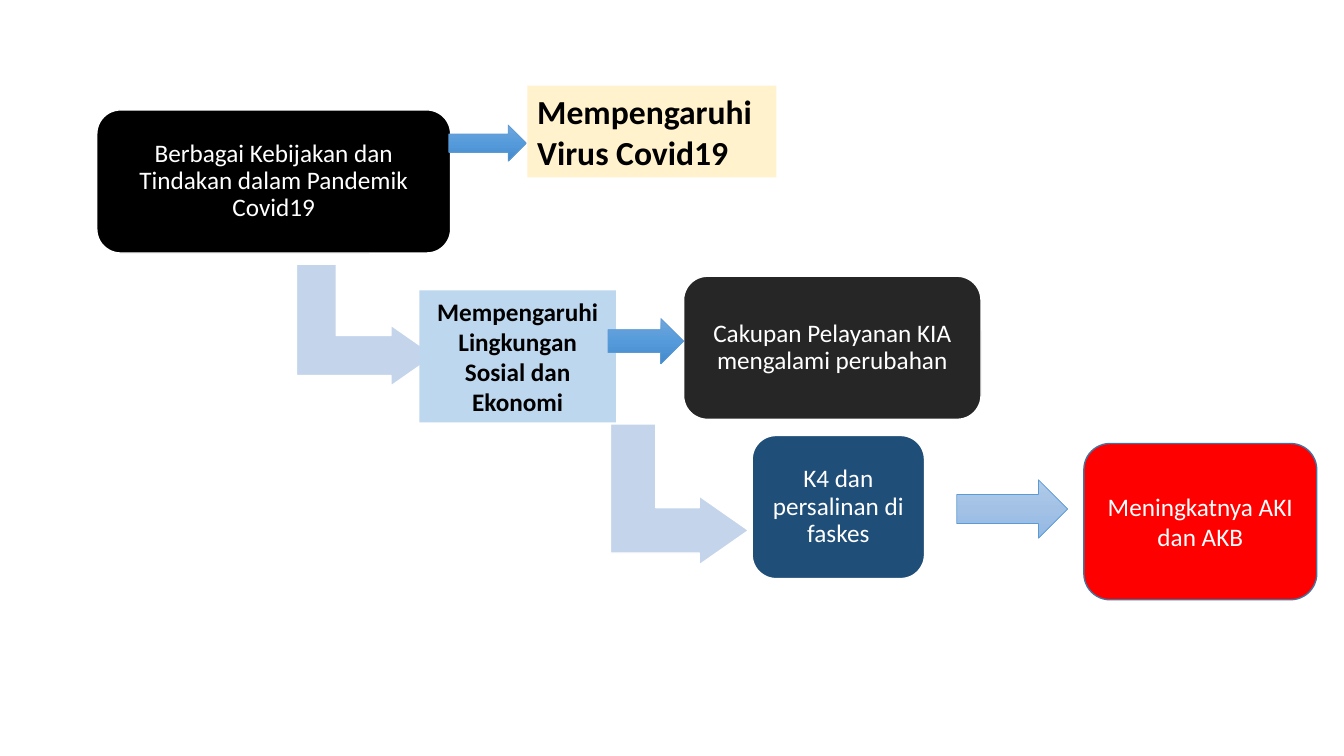
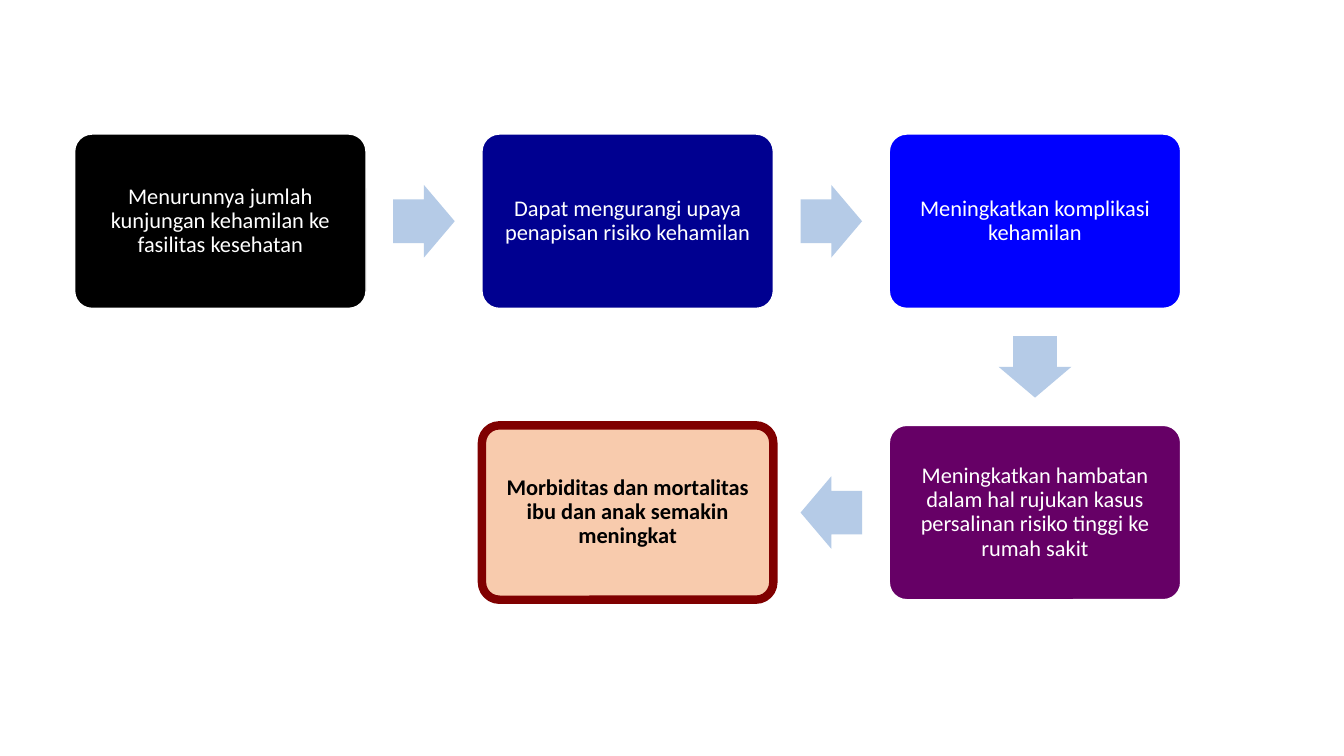
"""Build two flow slides on how the pandemic affects maternal and child health."""
from copy import deepcopy
from itertools import pairwise

from pptx import Presentation
from pptx.dml.color import RGBColor
from pptx.enum.shapes import MSO_SHAPE
from pptx.enum.text import MSO_ANCHOR, PP_ALIGN
from pptx.util import Inches, Pt

HUES = {
    "white": "FFFFFF", "black": "000000", "coal": "262626", "steel": "1F4E79",
    "red": "FF0000", "rim": "43739E", "cream": "FFF2CC", "sky": "BDD7EE",
    "bend": "C4D5EB", "edge": "5B9BD5", "step": "B5CBE7", "navy": "000090",
    "blue": "0000FF", "plum": "660066", "peach": "F8CBAD", "wine": "800000",
}
FADES = {
    "pale": ("B1CBE9", "A3C1E5", "93B9E4"),
    "deep": ("71A6DB", "559BDB", "448ACA"),
}


class Deck:
    """Hold the shared style and the current slide."""

    def __init__(self):
        self.show = Presentation()
        self.show.slide_width = Inches(13.33)
        self.show.slide_height = Inches(7.5)
        self.slide = None

    def page(self):
        self.slide = self.show.slides.add_slide(self.show.slide_layouts[6])

    def shape(self, kind, area, fill=None, line=None, width=1, bends=(), turn=0):
        item = self.slide.shapes.add_shape(kind, *map(Inches, area))
        item.shadow.inherit = False
        item.rotation = turn
        for spot, bend in enumerate(bends):
            item.adjustments[spot] = bend
        if fill:
            item.fill.solid()
            item.fill.fore_color.rgb = RGBColor.from_string(HUES[fill])
        if line:
            item.line.color.rgb = RGBColor.from_string(HUES[line])
            item.line.width = Pt(width)
        else:
            item.line.fill.background()
        return item

    def words(self, item, text, size, hue="white", bold=False,
              align=PP_ALIGN.CENTER, tight=False):
        frame = item.text_frame
        frame.text = text
        frame.word_wrap = True
        frame.vertical_anchor = MSO_ANCHOR.MIDDLE
        para = frame.paragraphs[0]
        para.alignment = align
        if tight:
            para.line_spacing = 0.9
            frame.margin_left = frame.margin_right = Inches(0.07)
            frame.margin_top = frame.margin_bottom = Inches(0.07)
        for run in para.runs:
            run.font.name = "Calibri"
            run.font.size = Pt(size)
            run.font.bold = bold
            run.font.color.rgb = RGBColor.from_string(HUES[hue])

    def card(self, area, text, fill, size=18, line="white", width=1,
             curve=0.167, hue="white", bold=False, tight=True):
        item = self.shape(MSO_SHAPE.ROUNDED_RECTANGLE, area, fill, line, width, (curve,))
        self.words(item, text, size, hue, bold, tight=tight)

    def label(self, area, text, fill, size, align):
        item = self.shape(MSO_SHAPE.RECTANGLE, area, fill)
        self.words(item, text, size, "black", True, align)

    def elbow(self, area):
        self.shape(MSO_SHAPE.BENT_UP_ARROW, area, "bend", "white",
                   bends=(0.328, 0.25, 0.358), turn=90)

    def arrow(self, area, fade):
        item = self.shape(MSO_SHAPE.RIGHT_ARROW, area, line="edge", width=0.5)
        item.fill.gradient()
        item.fill.gradient_angle = 270
        first = item.element.spPr.xpath("./a:gradFill/a:gsLst/a:gs")[0]
        first.addnext(deepcopy(first))
        for stop, hue, place in zip(item.fill.gradient_stops, FADES[fade], (0, 0.5, 1)):
            stop.color.rgb = RGBColor.from_string(hue)
            stop.position = place

    def step(self, mid, turn):
        wide, high = 0.61, 0.72
        area = (mid[0] - wide / 2, mid[1] - high / 2, wide, high)
        self.shape(MSO_SHAPE.RIGHT_ARROW, area, "step", bends=(0.6, 0.5), turn=turn)


def causes(deck):
    """Draw the chain from policies to mortality."""
    deck.page()
    deck.elbow((3.02, 2.54, 1.21, 1.37))
    deck.card((0.96, 1.09, 3.51, 1.42),
              "Berbagai Kebijakan dan Tindakan dalam Pandemik Covid19", "black")
    deck.elbow((6.04, 4.22, 1.4, 1.37))
    deck.card((6.78, 2.74, 2.95, 1.42),
              "Cakupan Pelayanan KIA mengalami perubahan", "coal")
    deck.card((7.46, 4.32, 1.71, 1.42), "K4 dan persalinan di faskes", "steel")
    deck.arrow((9.49, 4.76, 1.1, 0.58), "pale")
    deck.card((10.75, 4.4, 2.31, 1.55), "Meningkatnya AKI dan AKB", "red",
              line="rim", tight=False)
    deck.label((5.23, 0.85, 2.47, 0.91), "Mempengaruhi Virus Covid19",
               "cream", 24, PP_ALIGN.LEFT)
    deck.arrow((4.45, 1.24, 0.77, 0.36), "deep")
    deck.label((4.16, 2.88, 1.95, 1.31), "Mempengaruhi Lingkungan Sosial dan Ekonomi",
               "sky", 18, PP_ALIGN.CENTER)
    deck.arrow((6.03, 3.16, 0.75, 0.45), "deep")


def effects(deck):
    """Draw the winding row of effects on a grid."""
    deck.page()
    wide, high = 2.89, 1.73
    plain = {}
    alarm = {"line": "wine", "width": 6, "hue": "black", "bold": True}
    cards = [
        (0, 0, "Menurunnya jumlah kunjungan kehamilan ke fasilitas kesehatan",
         "black", plain),
        (1, 0, "Dapat mengurangi upaya penapisan risiko kehamilan", "navy", plain),
        (2, 0, "Meningkatkan komplikasi kehamilan", "blue", plain),
        (2, 1, "Meningkatkan hambatan dalam hal rujukan kasus persalinan "
               "risiko tinggi ke rumah sakit", "plum", plain),
        (1, 1, "Morbiditas dan mortalitas ibu dan anak semakin meningkat",
         "peach", alarm),
    ]
    mids = []
    for col, row, text, fill, style in cards:
        left, top = 0.74 + 4.04 * col, 1.33 + 2.89 * row
        deck.card((left, top, wide, high), text, fill, 16, curve=0.1, **style)
        mids.append((left + wide / 2, top + high / 2))
    for (start, end), turn in zip(pairwise(mids), (0, 0, 90, 180)):
        deck.step([a + (b - a) / 2 for a, b in zip(start, end)], turn)


def main():
    """Build and save the slides."""
    deck = Deck()
    causes(deck)
    effects(deck)
    deck.show.save("out.pptx")


if __name__ == "__main__":
    main()
